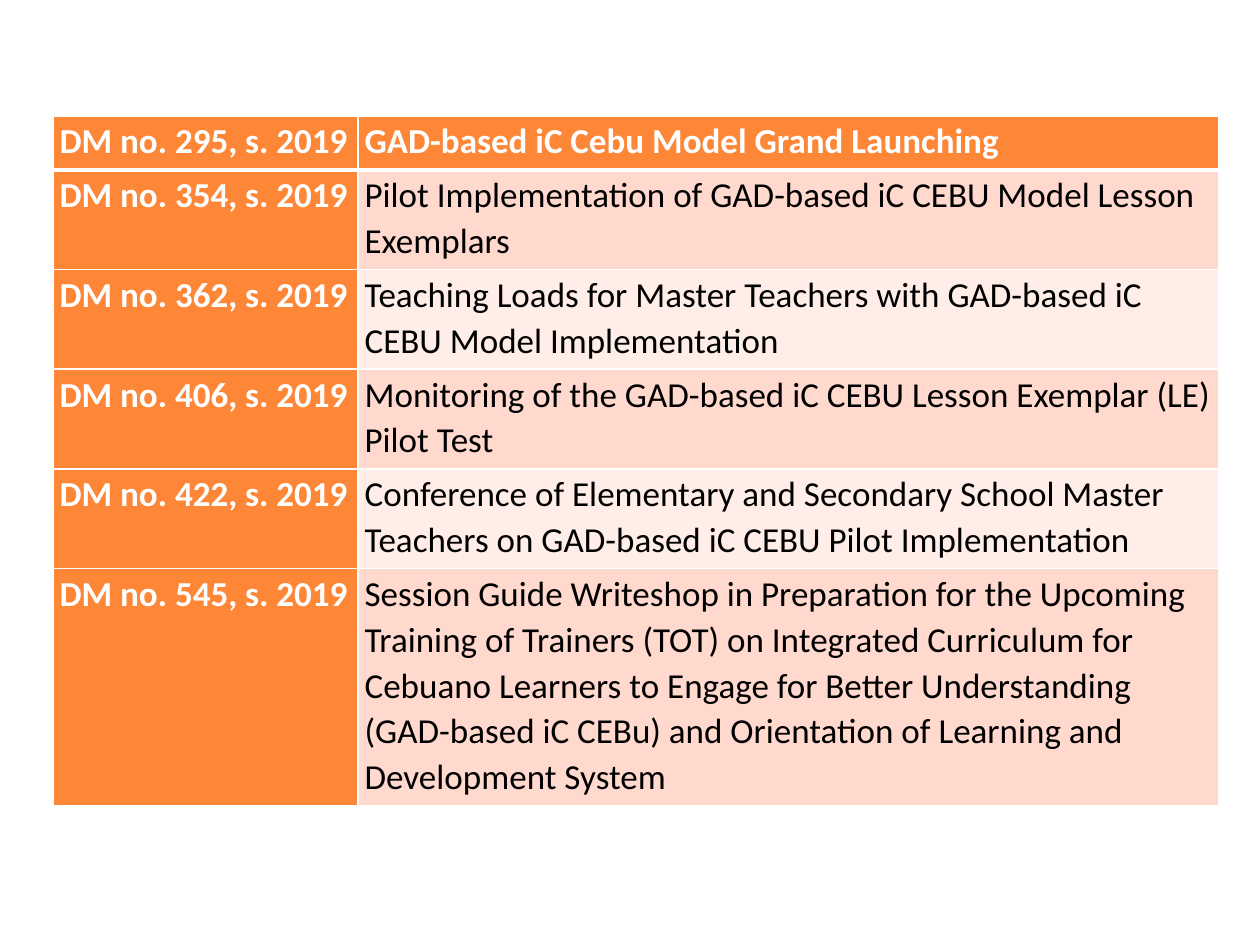
from lxml import etree
from pptx import Presentation
from pptx import util as u
from pptx.dml.color import RGBColor
from pptx.oxml import ns

ORANGE = RGBColor(0xFE, 0x86, 0x37)
DARK_BAND = RGBColor(0xFF, 0xD9, 0xCE)
LIGHT_BAND = RGBColor(0xFF, 0xED, 0xE8)
WHITE = RGBColor(0xFF, 0xFF, 0xFF)
BLACK = RGBColor(0, 0, 0)

MEMOS = [
    ("295", "GAD-based iC Cebu Model Grand Launching", 1.07),
    ("354", "Pilot Implementation of GAD-based iC CEBU Model Lesson Exemplars", 2),
    ("362", "Teaching Loads for Master Teachers with GAD-based iC CEBU Model "
            "Implementation", 2),
    ("406", "Monitoring of the GAD-based iC CEBU Lesson Exemplar (LE) Pilot Test", 2),
    ("422", "Conference of Elementary and Secondary School Master Teachers on "
            "GAD-based iC CEBU Pilot Implementation", 2),
    ("545", "Session Guide Writeshop in Preparation for the Upcoming Training of "
            "Trainers (TOT) on Integrated Curriculum for Cebuano Learners to Engage "
            "for Better Understanding (GAD-based iC CEBu) and Orientation of Learning "
            "and Development System", 4.74),
]
COLUMN_WIDTHS = (6.15, 17.35)
MARGINS = {"margin_left": u.Cm(0.13), "margin_top": u.Cm(0.03),
           "margin_right": u.Cm(0.08), "margin_bottom": u.Cm(0.13)}


def set_borders(cell, widths):
    """Draw white borders; widths maps lnL, lnR, lnT and lnB to points."""
    properties = cell._tc.get_or_add_tcPr()
    for position, (side, width) in enumerate(widths.items()):
        line = etree.Element(ns.qn(f"a:{side}"), w=str(u.Pt(width)))
        fill = etree.SubElement(line, ns.qn("a:solidFill"))
        etree.SubElement(fill, ns.qn("a:srgbClr"), val=str(WHITE))
        properties.insert(position, line)


presentation = Presentation()
presentation.slide_width = u.Cm(25.4)
presentation.slide_height = u.Cm(19.05)
slide = presentation.slides.add_slide(presentation.slide_layouts[6])

table = slide.shapes.add_table(
    len(MEMOS), 2, u.Cm(1.07), u.Cm(2.34), u.Cm(sum(COLUMN_WIDTHS)),
    u.Cm(sum(height for _, _, height in MEMOS))).table
for column, width in zip(table.columns, COLUMN_WIDTHS):
    column.width = u.Cm(width)

for row, (number, subject, height) in enumerate(MEMOS):
    table.rows[row].height = u.Cm(height)
    for column, words in enumerate((f"DM no. {number}, s. 2019", subject)):
        cell = table.cell(row, column)
        heading = row == 0 or column == 0
        for name, value in MARGINS.items():
            setattr(cell, name, value)
        cell.fill.solid()
        band = DARK_BAND if row % 2 else LIGHT_BAND
        cell.fill.fore_color.rgb = ORANGE if heading else band
        set_borders(cell, {"lnL": 1, "lnR": 1, "lnT": 3 if row == 1 else 1,
                           "lnB": 3 if row == 0 else 1})

        paragraph = cell.text_frame.paragraphs[0]
        paragraph.line_spacing = 1.07
        run = paragraph.add_run()
        run.text = words
        font_format = {"name": "Calibri", "size": u.Pt(20), "bold": heading}
        for name, value in font_format.items():
            setattr(run.font, name, value)
        run.font.color.rgb = WHITE if heading else BLACK

presentation.save("out.pptx")
